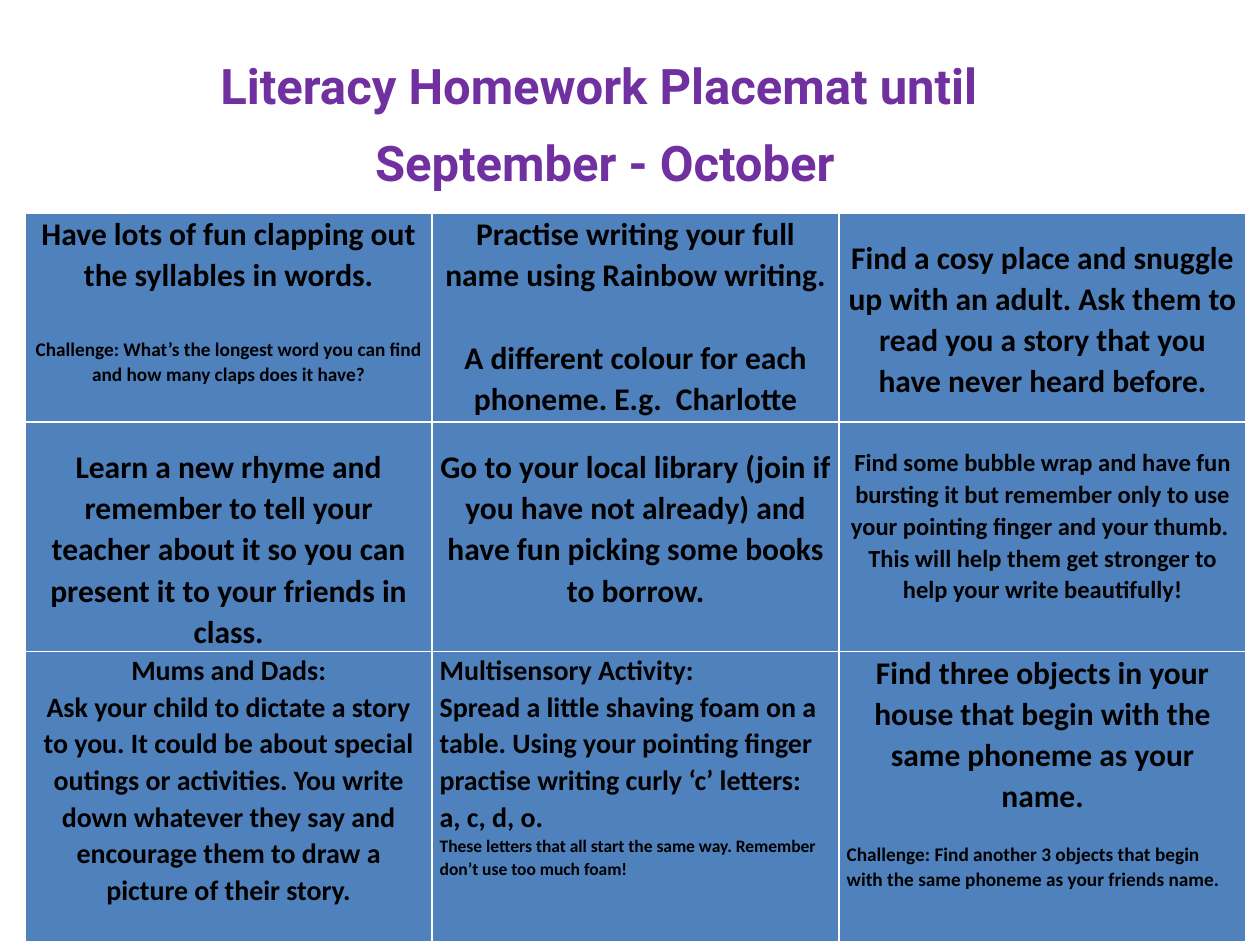
from dataclasses import dataclass

from pptx import Presentation
from pptx.dml.color import RGBColor
from pptx.enum.text import MSO_AUTO_SIZE, PP_ALIGN as Align
from pptx.util import Inches, Pt


@dataclass(frozen=True)
class Theme:
    title_color: RGBColor = RGBColor(0x70, 0x30, 0xA0)
    text_color: RGBColor = RGBColor(0, 0, 0)
    cell_color: RGBColor = RGBColor(0x4F, 0x81, 0xBD)
    title_font: str = "Roboto"
    body_font: str = "Calibri"
    title_size: float = 28
    task_size: float = 18
    activity_size: float = 16
    detail_size: float = 14
    challenge_size: float = 11
    hint_size: float = 10
    line_spacing: float = 1.07


THEME = Theme()


@dataclass
class Line:
    text: str
    size: float = THEME.task_size
    before: float = 0
    align: Align = Align.CENTER


@dataclass
class Task:
    lines: list
    top: float = 0


class Placemat:
    def __init__(self, slide, theme):
        self.slide = slide
        self.theme = theme

    def style_paragraph(self, paragraph, line, font_name, color):
        paragraph.text = line.text
        paragraph.alignment = line.align
        paragraph.line_spacing = self.theme.line_spacing
        paragraph.space_before = Pt(line.before)
        font = paragraph.font
        font.name, font.size, font.bold = font_name, Pt(line.size), True
        font.color.rgb = color

    def set_lines(self, frame, lines, font_name, color):
        frame.word_wrap = True
        for index, line in enumerate(lines):
            paragraph = frame.add_paragraph() if index else frame.paragraphs[0]
            self.style_paragraph(paragraph, line, font_name, color)

    def add_title(self, lines, left, top, width, height):
        box = self.slide.shapes.add_textbox(
            Inches(left), Inches(top), Inches(width), Inches(height))
        self.set_lines(box.text_frame, lines, self.theme.title_font, self.theme.title_color)
        box.text_frame.auto_size = MSO_AUTO_SIZE.SHAPE_TO_FIT_TEXT
        for paragraph in box.text_frame.paragraphs:
            paragraph.space_after = Pt(8)

    def fill_cell(self, cell, task):
        cell.fill.solid()
        cell.fill.fore_color.rgb = self.theme.cell_color
        cell.margin_left = cell.margin_right = Inches(0.06)
        cell.margin_top, cell.margin_bottom = Inches(task.top), 0
        self.set_lines(cell.text_frame, task.lines, self.theme.body_font, self.theme.text_color)

    def add_task_grid(self, tasks, left, top, col_width, row_heights):
        columns = len(tasks[0])
        table = self.slide.shapes.add_table(
            len(tasks), columns, Inches(left), Inches(top),
            Inches(col_width * columns), Inches(sum(row_heights))).table
        table.horz_banding = False
        for column in table.columns:
            column.width = Inches(col_width)
        for row, height, row_tasks in zip(table.rows, row_heights, tasks):
            row.height = Inches(height)
            for cell, task in zip(row.cells, row_tasks):
                self.fill_cell(cell, task)


LOWERED = 0.19  # top margin of the tasks that start lower in their cell

TITLE = [
    Line("Literacy Homework Placemat until ", THEME.title_size),
    Line("September - October", THEME.title_size),
]

TASKS = [
    [
        Task([
            Line("Have lots of fun clapping out the syllables in words."),
            Line("Challenge: What’s the longest word you can find and how many "
                 "claps does it have?", THEME.challenge_size, before=23.5),
        ]),
        Task([
            Line("Practise writing your full name using Rainbow writing."),
            Line("A different colour for each phoneme. E.g.  Charlotte", before=23.5),
        ]),
        Task([Line("Find a cosy place and snuggle up with an adult. Ask them to "
                   "read you a story that you have never heard before.")], LOWERED),
    ],
    [
        Task([Line("Learn a new rhyme and remember to tell your teacher about it so "
                   "you can present it to your friends in class.")], LOWERED),
        Task([Line("Go to your local library (join if you have not already) and have "
                   "fun picking some books to borrow.")], LOWERED),
        Task([Line("Find some bubble wrap and have fun bursting it but remember only "
                   "to use your pointing finger and your thumb.  This will help them "
                   "get stronger to help your write beautifully!",
                   THEME.detail_size)], LOWERED),
    ],
    [
        Task([
            Line("Mums and Dads:", THEME.activity_size),
            Line("Ask your child to dictate a story to you. It could be about special "
                 "outings or activities. You write down whatever they say and "
                 "encourage them to draw a picture of their story.",
                 THEME.activity_size),
        ]),
        Task([
            Line("Multisensory Activity:", THEME.activity_size, align=Align.LEFT),
            Line("Spread a little shaving foam on a table. Using your pointing finger "
                 "practise writing curly ‘c’ letters:",
                 THEME.activity_size, align=Align.LEFT),
            Line("a, c, d, o.", THEME.activity_size, align=Align.LEFT),
            Line("These letters that all start the same way. Remember don’t use too "
                 "much foam!", THEME.hint_size, align=Align.LEFT),
        ]),
        Task([
            Line("Find three objects in your house that begin with the same phoneme "
                 "as your name."),
            Line("Challenge: Find another 3 objects that begin with the same phoneme "
                 "as your friends name.", THEME.challenge_size, before=14.4,
                 align=Align.LEFT),
        ]),
    ],
]


def main():
    deck = Presentation()
    deck.slide_width, deck.slide_height = Inches(10), Inches(7.5)
    placemat = Placemat(deck.slides.add_slide(deck.slide_layouts[6]), THEME)
    placemat.add_task_grid(TASKS, left=0.2, top=1.69, col_width=3.23,
                           row_heights=[1.66, 1.81, 2.3])
    placemat.add_title(TITLE, left=0.35, top=0.36, width=8.9, height=1.22)
    deck.save("out.pptx")


if __name__ == "__main__":
    main()
